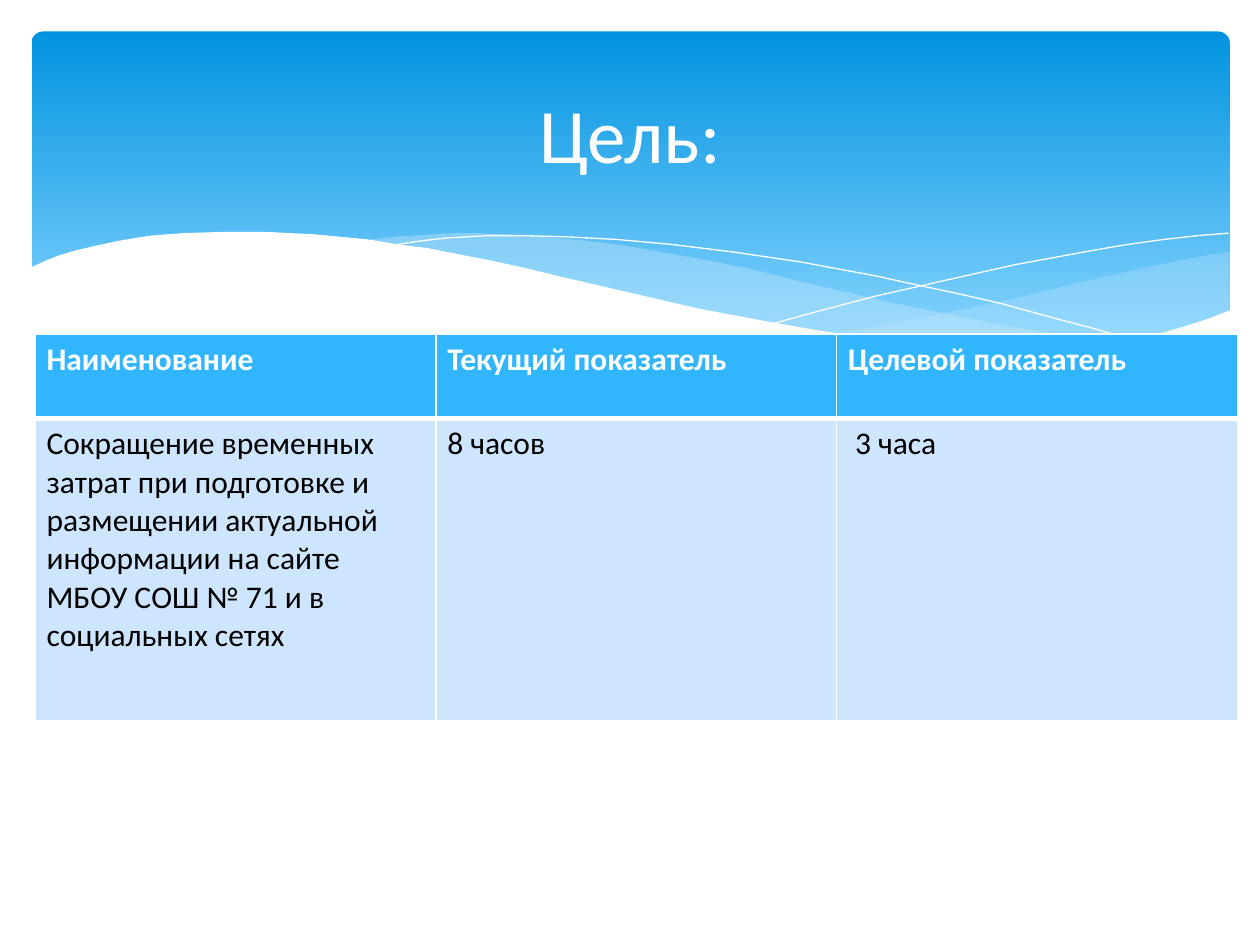
from lxml import etree
from pptx import Presentation
from pptx.dml.color import RGBColor
from pptx.enum.shapes import MSO_SHAPE
from pptx.enum.text import MSO_ANCHOR, PP_ALIGN
from pptx.oxml.ns import qn
from pptx.util import Pt

RECT = MSO_SHAPE.ROUNDED_RECTANGLE
MIDDLE = MSO_ANCHOR.MIDDLE
CENTER = PP_ALIGN.CENTER

PX = 9144  # 100 px to the inch
FONT = "Calibri"
COLORS = {
    "white": "FFFFFF",
    "text": "000000",
    "banner_top": "0293E0",
    "banner_bottom": "83D3FE",
    "wave": "C6E7FC",
    "header": "31B6FD",
    "body": "CEE5FE",
}
RGB = {name: RGBColor.from_string(code) for name, code in COLORS.items()}


def add_wave(points, fill=None, opacity=100):
    """Draw a filled outline, or an open white hairline when no fill is given."""
    builder = slide.shapes.build_freeform(*points[0], scale=PX)
    builder.add_line_segments(points[1:], close=fill is not None)
    wave = builder.convert_to_shape()
    wave.shadow.inherit = False
    if fill is None:
        wave.fill.background()
        wave.line.color.rgb = RGB["white"]
        wave.line.width = 0
        return
    wave.line.fill.background()
    wave.fill.solid()
    wave.fill.fore_color.rgb = RGB[fill]
    if opacity < 100:
        color = wave._element.spPr.find(qn("a:solidFill")).find(qn("a:srgbClr"))
        etree.SubElement(color, qn("a:alpha")).set("val", str(opacity * 1000))


def add_border(cell, side, width):
    line = etree.SubElement(cell._tc.get_or_add_tcPr(), qn(f"a:{side}"))
    line.set("w", str(Pt(width)))
    fill = etree.SubElement(line, qn("a:solidFill"))
    etree.SubElement(fill, qn("a:srgbClr")).set("val", COLORS["white"])


prs = Presentation()
prs.slide_width, prs.slide_height = 1000 * PX, 750 * PX
slide = prs.slides.add_slide(prs.slide_layouts[6])

# Banner
banner = slide.shapes.add_shape(RECT, 25 * PX, 25 * PX, 951 * PX, 270 * PX)
banner.adjustments[0] = 0.034
banner.shadow.inherit = False
banner.line.fill.background()
banner.fill.gradient()
banner.fill.gradient_angle = 270
for stop, name, position in zip(
    banner.fill.gradient_stops, ("banner_top", "banner_bottom"), (0, 0.9)
):
    stop.color.rgb = RGB[name]
    stop.position = position

# Waves under the banner
right_wave = [
    (976, 200), (962, 202), (935, 207), (906, 213), (861, 223), (805, 237),
    (753, 248), (706, 257), (661, 265), (691, 269), (719, 272), (745, 275),
    (781, 277), (814, 278), (844, 277), (872, 274), (897, 270), (921, 265),
    (942, 259), (963, 252), (976, 247),
]
middle_wave = [
    (893, 273), (866, 269), (837, 265), (807, 260), (775, 254), (741, 247),
    (706, 240), (668, 231), (629, 222), (598, 214), (569, 208), (541, 203),
    (514, 198), (489, 194), (465, 191), (442, 189), (420, 187), (399, 186),
    (380, 185), (361, 185), (344, 186), (313, 188), (286, 191), (323, 196),
    (362, 203), (404, 211), (449, 222), (491, 232), (530, 240), (566, 248),
    (601, 255), (634, 261), (665, 266), (695, 270), (722, 274), (748, 276),
    (773, 277), (807, 278), (838, 278), (867, 276),
]
falling_line = [
    (309, 195), (328, 192), (353, 189), (387, 187), (416, 187), (450, 188),
    (489, 190), (533, 194), (582, 200), (636, 208), (695, 219), (727, 226),
    (760, 233), (795, 241), (831, 251), (869, 261), (907, 272),
]
rising_line = [
    (613, 257), (653, 246), (695, 235), (748, 223), (806, 210), (866, 199),
    (895, 194), (924, 190), (951, 187), (975, 185),
]
front_wave = [
    (977, 246), (959, 253), (940, 259), (920, 265), (899, 269), (875, 273),
    (850, 275), (823, 277), (793, 276), (761, 275), (726, 272), (688, 268),
    (648, 262), (603, 254), (555, 245), (503, 233), (447, 220), (418, 213),
    (391, 207), (365, 202), (340, 197), (316, 194), (292, 190), (271, 188),
    (250, 186), (230, 185), (211, 184), (177, 184), (146, 185), (119, 187),
    (95, 191), (76, 195), (59, 199), (46, 203), (36, 207), (23, 213),
    (23, 329), (977, 329),
]
add_wave(right_wave, "wave", 29)
add_wave(middle_wave, "wave", 40)
add_wave(falling_line)
add_wave(rising_line)
add_wave(front_wave, "white")

# Indicator table
rows = [
    ("Наименование", "Текущий показатель", "Целевой показатель"),
    (
        "Сокращение временных затрат при подготовке и размещении актуальной "
        "информации на сайте МБОУ СОШ № 71 и в социальных сетях",
        "8 часов",
        " 3 часа",
    ),
]
row_heights = (67, 240)
column_width = 318
indicators = slide.shapes.add_table(
    len(rows), 3, 28 * PX, 265 * PX, 3 * column_width * PX, sum(row_heights) * PX
).table
for column in indicators.columns:
    column.width = column_width * PX
for r, (texts, height) in enumerate(zip(rows, row_heights)):
    is_header = r == 0
    indicators.rows[r].height = height * PX
    for c, text in enumerate(texts):
        cell = indicators.cell(r, c)
        cell.margin_left = cell.margin_right = 9 * PX
        cell.margin_top = cell.margin_bottom = 5 * PX
        for side in ("lnL", "lnR", "lnT", "lnB"):
            shared_edge = side == ("lnB" if is_header else "lnT")
            add_border(cell, side, 3 if shared_edge else 1)
        cell.fill.solid()
        cell.fill.fore_color.rgb = RGB["header" if is_header else "body"]
        cell.text_frame.text = text
        font = cell.text_frame.paragraphs[0].runs[0].font
        font.name, font.size, font.bold = FONT, Pt(18), is_header
        font.color.rgb = RGB["white" if is_header else "text"]

# Title
title = slide.shapes.add_textbox(50 * PX, 37 * PX, 900 * PX, 137 * PX).text_frame
title.word_wrap = True
title.vertical_anchor = MIDDLE
title.text = "Цель:"
title.paragraphs[0].alignment = CENTER
title_font = title.paragraphs[0].runs[0].font
title_font.name, title_font.size = FONT, Pt(44)
title_font.color.rgb = RGB["white"]

prs.save("out.pptx")
